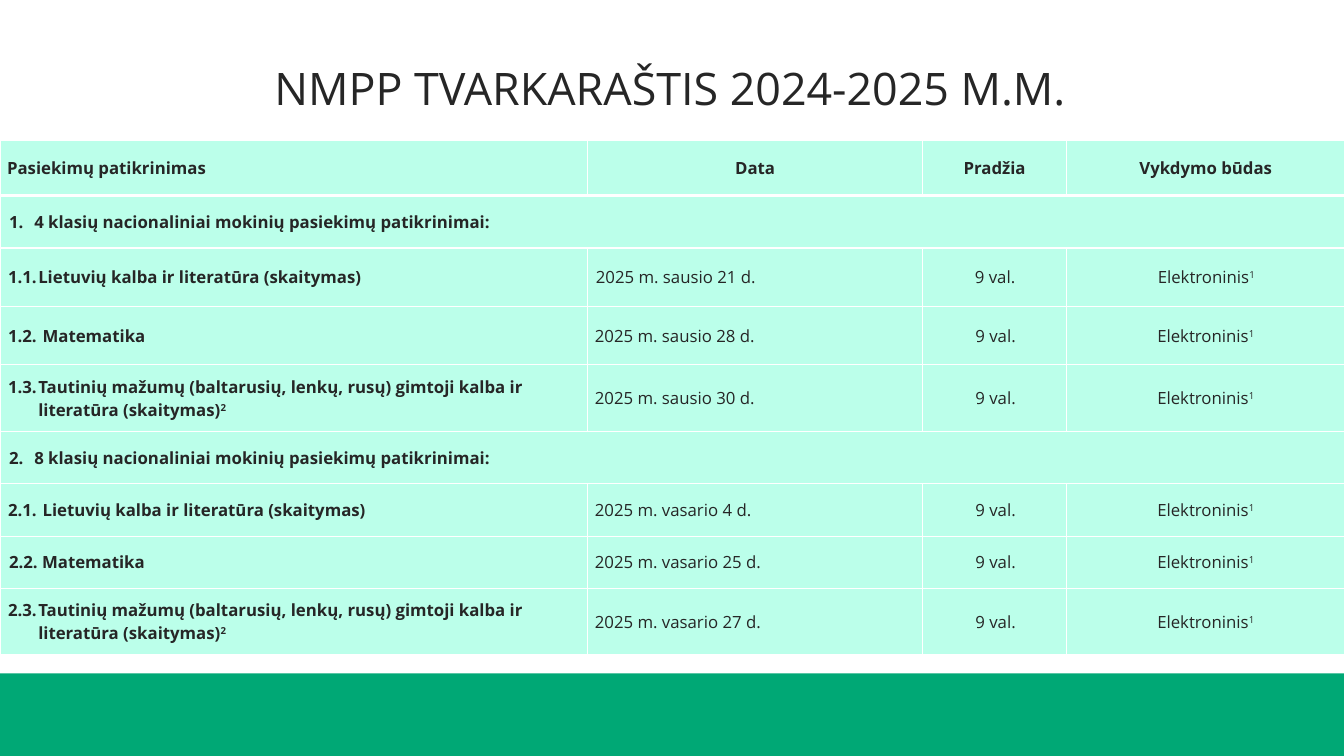
from dataclasses import dataclass

from lxml.etree import SubElement
from pptx import Presentation
from pptx.dml.color import RGBColor
from pptx.enum.shapes import MSO_SHAPE
from pptx.enum.text import MSO_ANCHOR, MSO_AUTO_SIZE, PP_ALIGN
from pptx.oxml.ns import qn
from pptx.slide import Slide
from pptx.table import Table, _Cell
from pptx.util import Inches, Pt

COLOURS = {"text": "262626", "cell": "BBFFEA", "border": "FFFFFF", "band": "00A875"}
FONT = "Open Sans"
COLUMN_WIDTHS = [5.83, 3.32, 1.43, 2.76]
HEADINGS = ["Pasiekimų patikrinimas", "Data", "Pradžia", "Vykdymo būdas"]
START = "9 val."
MODE = "Elektroninis"
NATIVE_LANGUAGE = "Tautinių mažumų (baltarusių, lenkų, rusų) gimtoji kalba ir literatūra (skaitymas)"


@dataclass(frozen=True)
class Indent:
    left: float = 0
    first: float = 0


FLUSH = Indent()
NUDGED = Indent(0.02)
SECTION = Indent(0.27, -0.25)
HANGING = Indent(0.31, -0.3)


@dataclass(frozen=True)
class ScheduleRow:
    """One check; a row without a date is a section heading across the table."""
    height: float
    name: str
    date: str = ""
    note: str = ""
    name_indent: Indent = HANGING
    date_indent: Indent = FLUSH
    start_indent: Indent = NUDGED
    mode_indent: Indent = FLUSH


SCHEDULE = [
    ScheduleRow(0.52, "1.\t4 klasių nacionaliniai mokinių pasiekimų patikrinimai:", name_indent=SECTION),
    ScheduleRow(0.58, "1.1.\tLietuvių kalba ir literatūra (skaitymas)", "2025 m. sausio 21 d.",
                date_indent=HANGING, start_indent=HANGING, mode_indent=HANGING),
    ScheduleRow(0.58, "1.2.\t Matematika", "2025 m. sausio 28 d."),
    ScheduleRow(0.66, f"1.3.\t{NATIVE_LANGUAGE}", "2025 m. sausio 30 d.", "2"),
    ScheduleRow(0.52, "2.\t8 klasių nacionaliniai mokinių pasiekimų patikrinimai:", name_indent=SECTION),
    ScheduleRow(0.52, "2.1.\t Lietuvių kalba ir literatūra (skaitymas)", "2025 m. vasario 4 d."),
    ScheduleRow(0.52, "2.2. Matematika", "2025 m. vasario 25 d.", name_indent=NUDGED),
    ScheduleRow(0.66, f"2.3.\t{NATIVE_LANGUAGE}", "2025 m. vasario 27 d.", "2"),
]


def colour(name: str) -> RGBColor:
    return RGBColor.from_string(COLOURS[name])


def style_cell(cell: _Cell, top: float, bottom: float) -> None:
    """Give a cell its borders (top and bottom widths in points), fill and margins."""
    properties = cell._tc.get_or_add_tcPr()
    for side, width in (("L", 1), ("R", 1), ("T", top), ("B", bottom)):
        line = SubElement(properties, qn(f"a:ln{side}"), w=str(Pt(width)))
        fill = SubElement(line, qn("a:solidFill"))
        SubElement(fill, qn("a:srgbClr"), val=COLOURS["border"])
    cell.fill.solid()
    cell.fill.fore_color.rgb = colour("cell")
    cell.vertical_anchor = MSO_ANCHOR.MIDDLE
    cell.margin_left = cell.margin_right = Inches(0.07)
    cell.margin_top = cell.margin_bottom = 0


def write_cell(cell: _Cell, text: str, bold: bool = False, centred: bool = False,
               indent: Indent = FLUSH, note: str = "") -> None:
    """Write a cell's text, with an optional superscript note number."""
    para = cell.text_frame.paragraphs[0]
    para.text = text
    para.alignment = PP_ALIGN.CENTER if centred else PP_ALIGN.LEFT
    properties = para._p.get_or_add_pPr()
    properties.set("marL", str(Inches(indent.left)))
    properties.set("indent", str(Inches(indent.first)))
    if note:
        span = para.add_run()
        span.text = note
        span._r.get_or_add_rPr().set("baseline", "30000")
    for span in para.runs:
        span.font.name = FONT
        span.font.size = Pt(12)
        span.font.bold = bold
        span.font.color.rgb = colour("text")


def write_schedule_row(table: Table, number: int, row: ScheduleRow) -> None:
    name, date, start, mode = (table.cell(number, column) for column in range(4))
    write_cell(name, row.name, bold=True, indent=row.name_indent, note=row.note)
    if not row.date:
        name.merge(mode)
        return
    write_cell(date, row.date, indent=row.date_indent)
    write_cell(start, START, centred=True, indent=row.start_indent)
    write_cell(mode, MODE, centred=True, indent=row.mode_indent, note="1")


def add_schedule(page: Slide) -> None:
    heights = [0.55] + [row.height for row in SCHEDULE]
    table = page.shapes.add_table(len(heights), len(COLUMN_WIDTHS), 0, Inches(1.39),
                                  Inches(13.33), Inches(sum(heights))).table
    table.first_row = table.horz_banding = False
    for column, width in zip(table.columns, COLUMN_WIDTHS):
        column.width = Inches(width)
    for number, height in enumerate(heights):
        table.rows[number].height = Inches(height)
        for cell in table.rows[number].cells:
            style_cell(cell, top=3 if number == 1 else 1, bottom=3 if number == 0 else 1)
    for column, heading in enumerate(HEADINGS):
        write_cell(table.cell(0, column), heading, bold=True, centred=column > 0)
    for number, row in enumerate(SCHEDULE, start=1):
        write_schedule_row(table, number, row)


def add_band(page: Slide) -> None:
    band = page.shapes.add_shape(MSO_SHAPE.RECTANGLE, 0, Inches(6.68), Inches(13.33), Inches(0.82))
    band.shadow.inherit = False
    band.fill.solid()
    band.fill.fore_color.rgb = colour("band")
    band.line.fill.background()


def write_title(page: Slide) -> None:
    title = page.shapes.title
    title.left, title.top = Inches(0.6), Inches(0.3)
    title.width, title.height = Inches(12.1), Inches(0.89)
    frame = title.text_frame
    frame.text = "NMPP TVARKARAŠTIS 2024-2025 M.M."
    frame.auto_size = MSO_AUTO_SIZE.NONE
    frame.vertical_anchor = MSO_ANCHOR.BOTTOM
    para = frame.paragraphs[0]
    para.alignment = PP_ALIGN.CENTER
    para.line_spacing = 0.9
    font = para.runs[0].font
    font.name = FONT
    font.size = Pt(32)
    font.color.rgb = colour("text")


def main() -> None:
    deck = Presentation()
    deck.slide_width, deck.slide_height = Inches(13.33), Inches(7.5)
    page = deck.slides.add_slide(deck.slide_layouts[5])
    write_title(page)
    add_band(page)
    add_schedule(page)
    deck.save("out.pptx")


if __name__ == "__main__":
    main()
